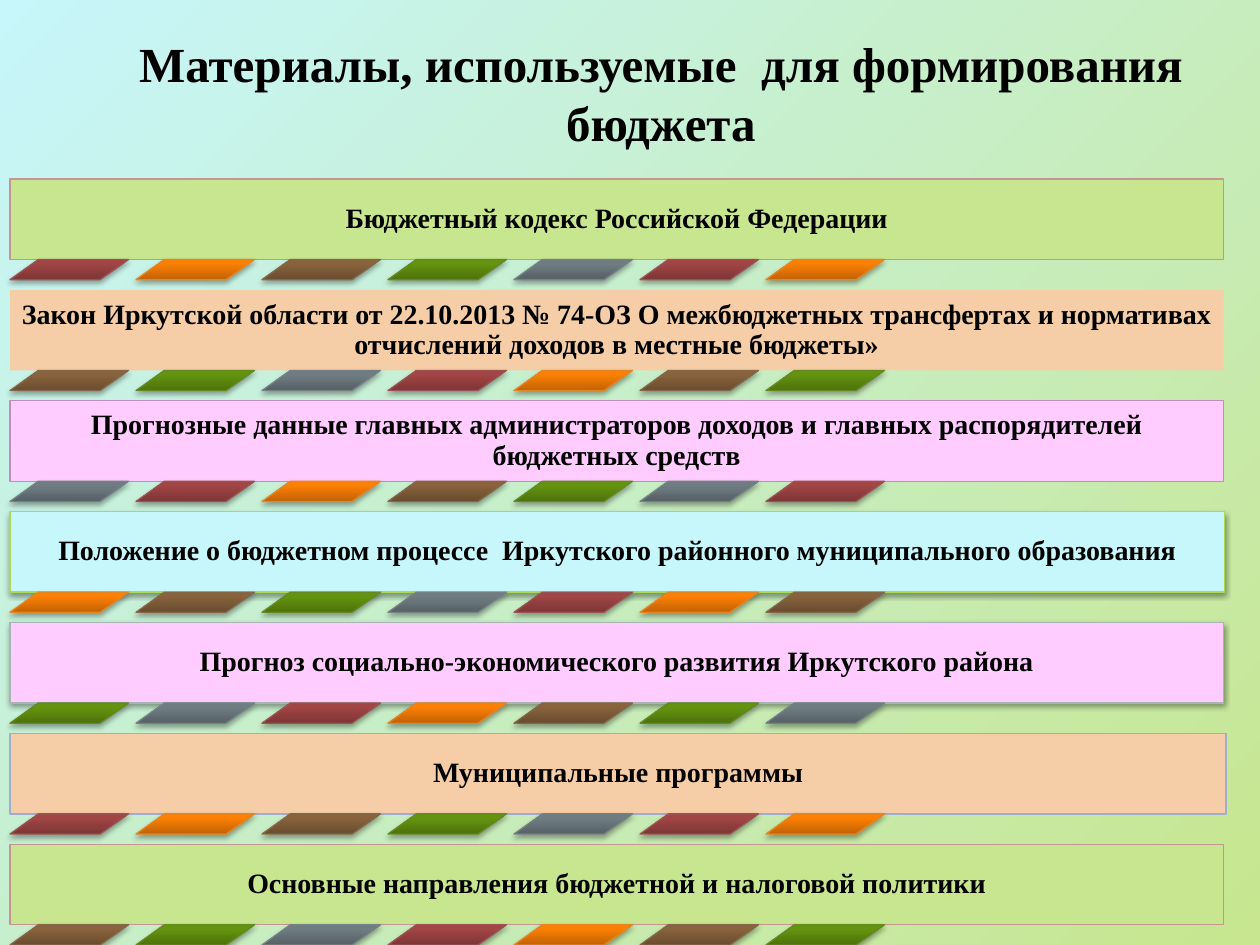
from lxml import etree
from pptx import Presentation
from pptx.dml.color import RGBColor
from pptx.enum import shapes, text
from pptx.oxml import ns
from pptx.util import Inches, Pt

BLACK = RGBColor(0x00, 0x00, 0x00)
LIME = RGBColor(0xC7, 0xE6, 0x8F)
PEACH = RGBColor(0xF5, 0xCE, 0xA7)
PINK = RGBColor(0xFF, 0xCC, 0xFF)
CYAN = RGBColor(0xC7, 0xF6, 0xFB)
ROSE = RGBColor(0xC7, 0x94, 0x94)
MAUVE = RGBColor(0xC1, 0x8D, 0xBF)
LEAF = RGBColor(0xAB, 0xD9, 0x58)
GREY = RGBColor(0xAC, 0xB3, 0xB6)
BLUE = RGBColor(0xA0, 0xAD, 0xD2)
# Dark end, light end and outline of each tile
TILES = [
    (RGBColor(0x7D, 0x35, 0x35), RGBColor(0xA2, 0x45, 0x45), RGBColor(0x9C, 0x52, 0x52)),
    (RGBColor(0xC2, 0x62, 0x03), RGBColor(0xFB, 0x80, 0x04), RGBColor(0xE6, 0x84, 0x22)),
    (RGBColor(0x69, 0x4C, 0x2F), RGBColor(0x89, 0x63, 0x3D), RGBColor(0x84, 0x66, 0x48)),
    (RGBColor(0x4D, 0x72, 0x0B), RGBColor(0x64, 0x94, 0x0F), RGBColor(0x63, 0x89, 0x1F)),
    (RGBColor(0x56, 0x60, 0x65), RGBColor(0x6F, 0x7D, 0x83), RGBColor(0x75, 0x80, 0x85)),
]
FONT = "Times New Roman"

# Text, fill, outline, width, shadow distance in points
BANDS = [
    ("Бюджетный кодекс Российской Федерации", LIME, ROSE, 9.63, None),
    ("Закон Иркутской области от 22.10.2013 № 74-ОЗ О межбюджетных трансфертах "
     "и нормативах отчислений доходов в местные бюджеты»", PEACH, None, 9.63, None),
    ("Прогнозные данные главных администраторов доходов и главных распорядителей "
     "бюджетных средств", PINK, MAUVE, 9.63, None),
    ("Положение о бюджетном процессе  Иркутского районного муниципального образования",
     CYAN, LEAF, 9.64, 1.6),
    ("Прогноз социально-экономического развития Иркутского района",
     PINK, GREY, 9.63, 1.6),
    ("Муниципальные программы", PEACH, BLUE, 9.65, None),
    ("Основные направления бюджетной и налоговой политики", LIME, ROSE, 9.63, None),
]


def shade(shape, dist, alpha):
    """Give the shape a soft black shadow straight below it."""
    effects = shape._element.spPr.find(ns.qn("a:effectLst"))
    outer = etree.SubElement(effects, ns.qn("a:outerShdw"), blurRad=str(Pt(3.1)),
                             dist=str(Pt(dist)), dir="5400000", rotWithShape="0")
    color = etree.SubElement(outer, ns.qn("a:srgbClr"), val="000000")
    etree.SubElement(color, ns.qn("a:alpha"), val=str(alpha * 1000))


def blend(fill, first, last, angle, end):
    """Fill with two colours, the second one reached at end."""
    fill.gradient()
    fill.gradient_angle = angle
    for stop, color, pos in zip(fill.gradient_stops, (first, last), (0, end)):
        stop.color.rgb = color
        stop.position = pos


deck = Presentation()
deck.slide_width, deck.slide_height = Inches(10), Inches(7.5)
slide = deck.slides.add_slide(deck.slide_layouts[5])
blend(slide.background.fill, CYAN, LIME, 315, 1)

# Title
title = slide.shapes.title
title.left, title.top = Inches(0.68), Inches(0.6)
title.width, title.height = Inches(9.13), Inches(0.65)
frame = title.text_frame
frame.text = "Материалы, используемые  для формирования бюджета"
frame.auto_size = text.MSO_AUTO_SIZE.NONE
frame.vertical_anchor = text.MSO_ANCHOR.BOTTOM
para = frame.paragraphs[0]
para.alignment = text.PP_ALIGN.CENTER
para.font.name, para.font.size, para.font.bold = FONT, Pt(28), True
para.font.color.rgb = BLACK

for row, (words, fill, edge, width, dist) in enumerate(BANDS):
    top = 1.42 + 0.88 * row

    # Band with its text
    band = slide.shapes.add_shape(shapes.MSO_SHAPE.RECTANGLE, Inches(0.08),
                                  Inches(top), Inches(width), Inches(0.64))
    band.shadow.inherit = False
    band.fill.solid()
    band.fill.fore_color.rgb = fill
    if edge:
        band.line.color.rgb = edge
        band.line.width = Pt(0.75)
    else:
        band.line.fill.background()
    if dist:
        shade(band, dist, 38)
    frame = band.text_frame
    frame.word_wrap = True
    frame.vertical_anchor = text.MSO_ANCHOR.MIDDLE
    frame.margin_left = frame.margin_right = Inches(0.07)
    frame.margin_top = frame.margin_bottom = Inches(0.07)
    frame.text = words
    para = frame.paragraphs[0]
    para.alignment = text.PP_ALIGN.CENTER
    para.line_spacing = 0.9
    para.font.name, para.font.size, para.font.bold = FONT, Pt(16), True
    para.font.color.rgb = BLACK

    # Seven slanted tiles below, the colours running on from row to row
    for col in range(7):
        dark, light, rim = TILES[(7 * row + col) % len(TILES)]
        tile = slide.shapes.add_shape(shapes.MSO_SHAPE.PARALLELOGRAM, Inches(0.08 + col),
                                      Inches(top + 0.64), Inches(0.94), Inches(0.16))
        tile.adjustments[0] = 1.41
        tile.shadow.inherit = False
        blend(tile.fill, dark, light, 90, 0.8)
        tile.line.color.rgb = rim
        tile.line.width = Pt(0.75)
        shade(tile, 1.8, 35)

deck.save("out.pptx")
